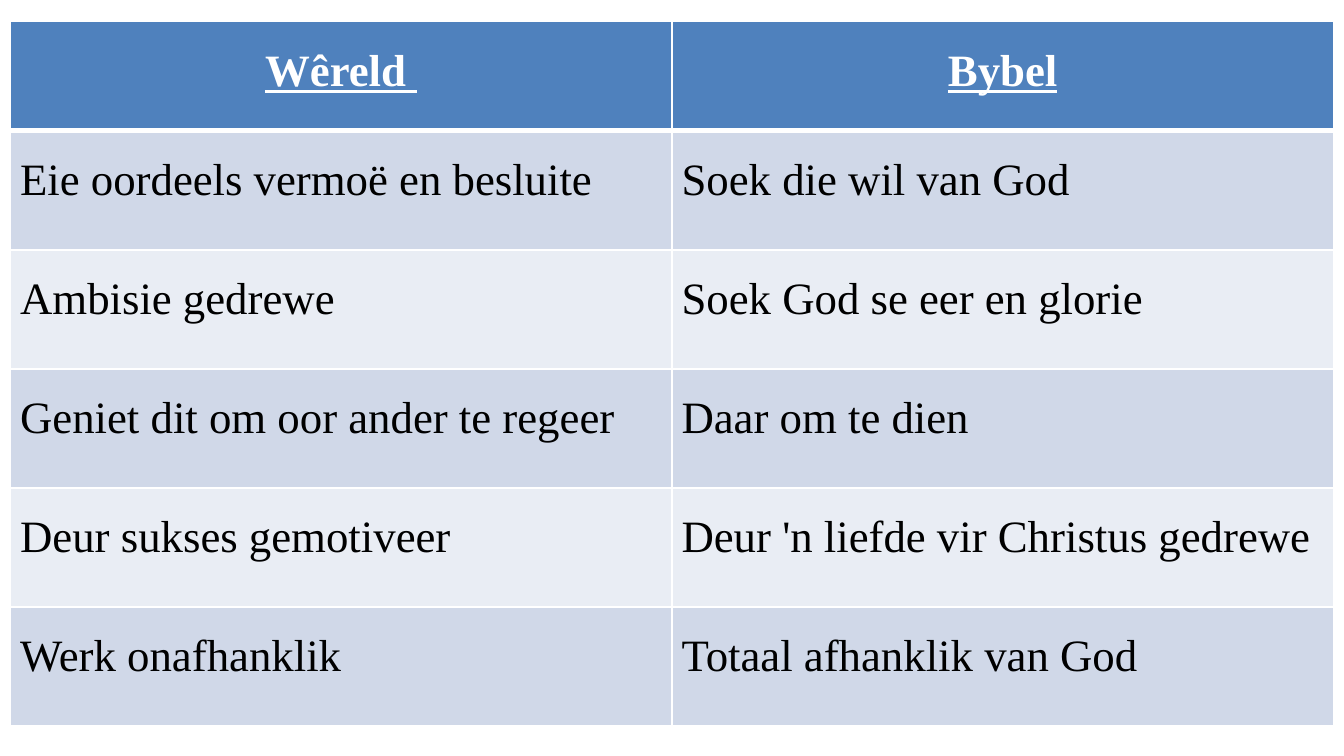
"""Build a slide with a table that sets the world beside the Bible."""
from lxml import etree
from pptx import Presentation
from pptx.dml.color import RGBColor
from pptx.enum.text import PP_ALIGN
from pptx.oxml.ns import qn
from pptx.util import Cm, Pt

CENTER, LEFT = PP_ALIGN.CENTER, PP_ALIGN.LEFT
WHITE = RGBColor(0xFF, 0xFF, 0xFF)
BLACK = RGBColor(0x00, 0x00, 0x00)
HEADER_BLUE = RGBColor(0x4F, 0x81, 0xBD)
BAND_DARK = RGBColor(0xD0, 0xD8, 0xE8)
BAND_LIGHT = RGBColor(0xE9, 0xED, 0xF4)
FONT = "Times New Roman"
THIN, THICK = Pt(1), Pt(3)
COLUMN_WIDTH, HEADER_HEIGHT, ROW_HEIGHT = Cm(12.5), Cm(2.06), Cm(2.25)

CONTRASTS = [
    ("Wêreld ", "Bybel"),
    ("Eie oordeels vermoë en besluite", "Soek die wil van God"),
    ("Ambisie gedrewe", "Soek God se eer en glorie"),
    ("Geniet dit om oor ander te regeer", "Daar om te dien"),
    ("Deur sukses gemotiveer", "Deur 'n liefde vir Christus gedrewe"),
    ("Werk onafhanklik", "Totaal afhanklik van God"),
]


def set_borders(cell, top, bottom):
    properties = cell._tc.get_or_add_tcPr()
    widths = {"a:lnL": THIN, "a:lnR": THIN, "a:lnT": top, "a:lnB": bottom}
    for tag, width in widths.items():
        border = etree.SubElement(properties, qn(tag), w=str(width))
        fill = etree.SubElement(border, qn("a:solidFill"))
        etree.SubElement(fill, qn("a:srgbClr"), val=str(WHITE))


def fill_cell(cell, wording, row):
    is_header = row == 0
    set_borders(cell, THICK if row == 1 else THIN, THICK if is_header else THIN)
    band = BAND_DARK if row % 2 else BAND_LIGHT
    cell.fill.solid()
    cell.fill.fore_color.rgb = HEADER_BLUE if is_header else band
    cell.margin_left = cell.margin_right = Cm(0.18)
    cell.margin_top = cell.margin_bottom = 0
    cell.text = wording
    paragraph = cell.text_frame.paragraphs[0]
    paragraph.alignment = CENTER if is_header else LEFT
    paragraph.line_spacing = 1.5
    font = paragraph.font
    font.name, font.size = FONT, Pt(24)
    font.bold = font.underline = is_header
    font.color.rgb = WHITE if is_header else BLACK


def add_contrast_table(slide):
    row_count, column_count = len(CONTRASTS), len(CONTRASTS[0])
    table = slide.shapes.add_table(
        row_count, column_count, Cm(0.2), Cm(0.41),
        COLUMN_WIDTH * column_count,
        HEADER_HEIGHT + ROW_HEIGHT * (row_count - 1),
    ).table
    for column in table.columns:
        column.width = COLUMN_WIDTH
    for row, contrast in enumerate(CONTRASTS):
        table.rows[row].height = ROW_HEIGHT if row else HEADER_HEIGHT
        for column, wording in enumerate(contrast):
            fill_cell(table.cell(row, column), wording, row)


def main():
    presentation = Presentation()
    presentation.slide_width, presentation.slide_height = Cm(25.4), Cm(14.29)
    slide = presentation.slides.add_slide(presentation.slide_layouts[6])
    add_contrast_table(slide)
    presentation.save("out.pptx")


if __name__ == "__main__":
    main()
